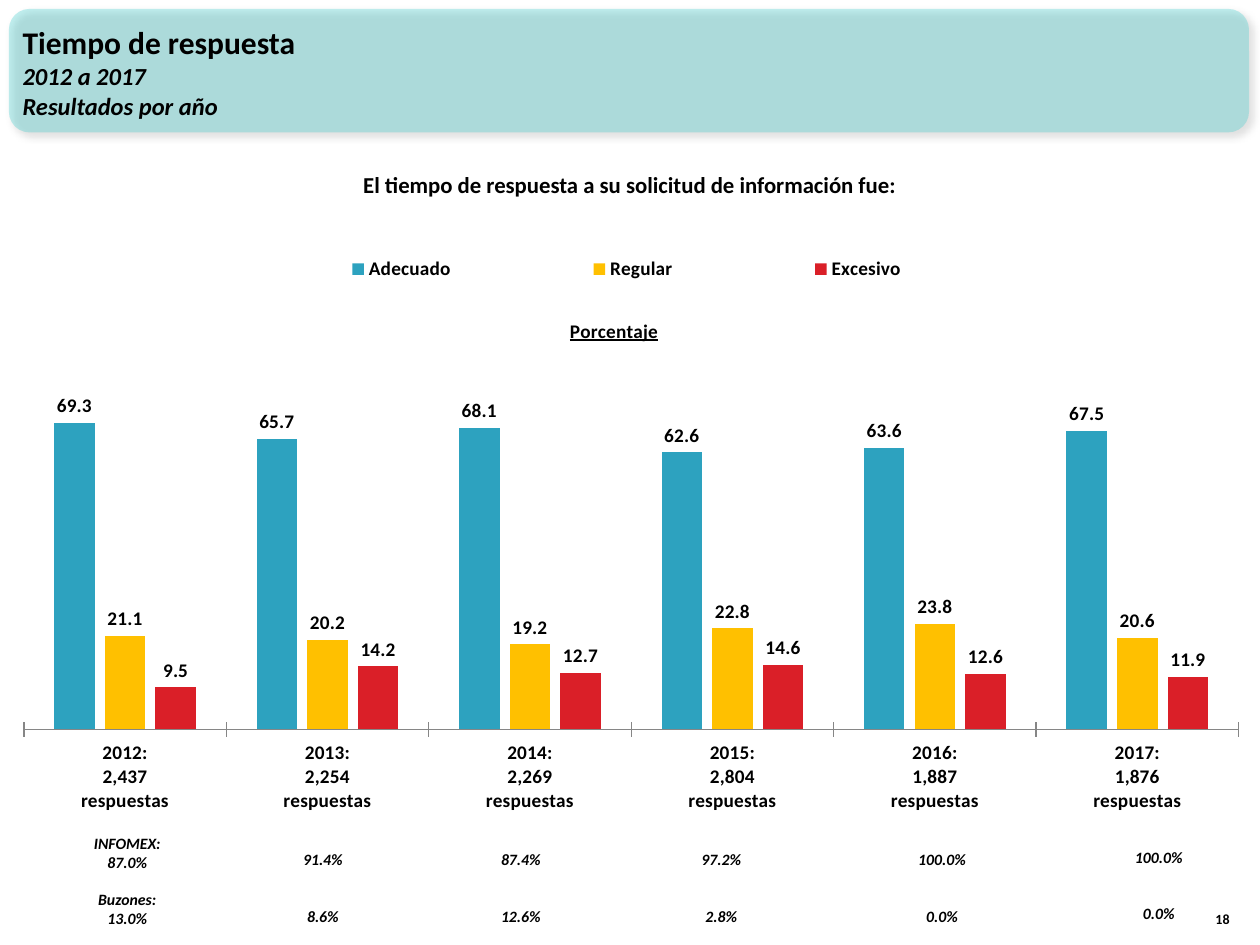
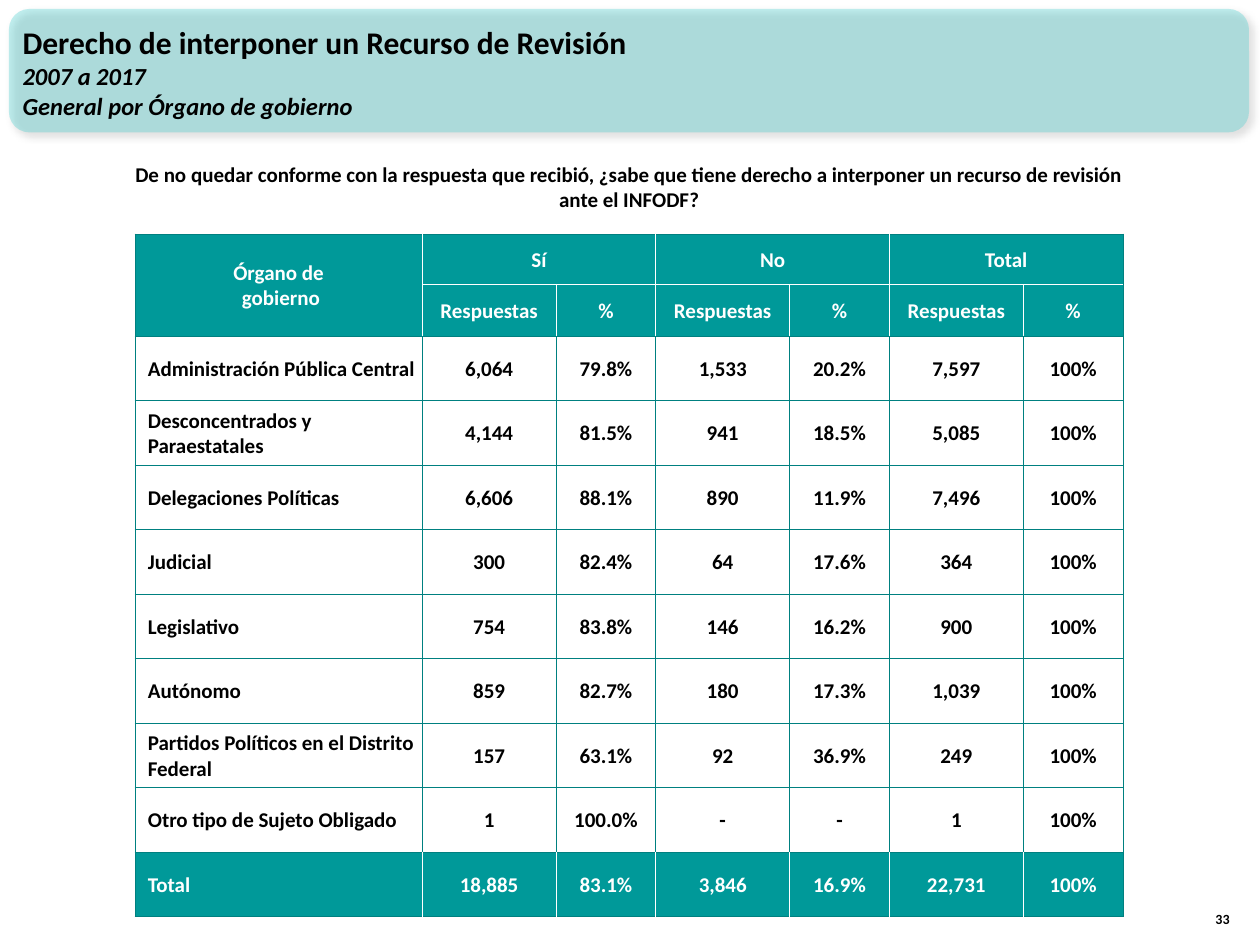
from dataclasses import dataclass

from lxml.etree import SubElement
from pptx import Presentation
from pptx.chart.data import CategoryChartData
from pptx.dml.color import RGBColor
from pptx.enum.chart import XL_CHART_TYPE, XL_LABEL_POSITION, XL_LEGEND_POSITION, XL_TICK_MARK
from pptx.enum.shapes import MSO_SHAPE
from pptx.enum.text import MSO_ANCHOR, MSO_AUTO_SIZE, PP_ALIGN
from pptx.oxml import parse_xml
from pptx.oxml.ns import nsdecls, qn
from pptx.util import Cm, Pt


@dataclass(frozen=True)
class Theme:
    font: str = "Calibri"
    ink: str = "000000"
    paper: str = "FFFFFF"
    band: str = "33CCCC"
    header: str = "009999"
    rule: str = "008080"
    axis: str = "868686"
    title: float = 18
    subtitle: float = 14
    question: float = 13
    table: float = 12
    chart: float = 11
    share: float = 9
    page: float = 8


THEME = Theme()


@dataclass(frozen=True)
class Box:
    """Left, top, width and height in centimetres."""
    left: float
    top: float
    width: float
    height: float

    def lengths(self) -> tuple:
        return Cm(self.left), Cm(self.top), Cm(self.width), Cm(self.height)


@dataclass(frozen=True)
class ChannelShare:
    """Share of answers by channel, shown below one year."""
    text: str
    box: Box
    gap: float = 21.5
    inset: float = 0


@dataclass(frozen=True)
class Series:
    name: str
    color: str
    values: tuple


# Content of the chart slide
YEARS = {2012: "2,437", 2013: "2,254", 2014: "2,269", 2015: "2,804", 2016: "1,887", 2017: "1,876"}
RATINGS = [
    Series("Adecuado", "2DA2BF", (69.3, 65.7, 68.1, 62.6, 63.6, 67.5)),
    Series("Regular", "FFC000", (21.1, 20.2, 19.2, 22.8, 23.8, 20.6)),
    Series("Excesivo", "DA1F28", (9.5, 14.2, 12.7, 14.6, 12.6, 11.9)),
]
SHARES = [
    ChannelShare("INFOMEX: 87.0%\nBuzones: 13.0%", Box(1.51, 16.68, 2.11, 2.18), 10.5, 0.25),
    ChannelShare("91.4%\n8.6%", Box(5.76, 17.01, 1.5, 1.8)),
    ChannelShare("87.4%\n12.6%", Box(9.75, 17.01, 1.5, 1.8)),
    ChannelShare("97.2%\n2.8%", Box(13.79, 17.01, 1.5, 1.8)),
    ChannelShare("100.0%\n0.0%", Box(18.24, 17.01, 1.5, 1.8)),
    ChannelShare("100.0%\n0.0%", Box(22.61, 16.96, 1.5, 1.8)),
]

# Content of the table slide
HEADINGS = [
    ("Órgano de\n gobierno", "Sí", "", "No", "", "Total", ""),
    ("",) + ("Respuestas", "%") * 3,
]
BODIES = [
    ("Administración Pública Central", "6,064", "79.8%", "1,533", "20.2%", "7,597", "100%"),
    ("Desconcentrados y Paraestatales", "4,144", "81.5%", "941", "18.5%", "5,085", "100%"),
    ("Delegaciones Políticas", "6,606", "88.1%", "890", "11.9%", "7,496", "100%"),
    ("Judicial", "300", "82.4%", "64", "17.6%", "364", "100%"),
    ("Legislativo", "754", "83.8%", "146", "16.2%", "900", "100%"),
    ("Autónomo", "859", "82.7%", "180", "17.3%", "1,039", "100%"),
    ("Partidos Políticos en el Distrito Federal", "157", "63.1%", "92", "36.9%", "249", "100%"),
    ("Otro tipo de Sujeto Obligado", "1", "100.0%", "-", "-", "1", "100%"),
    ("Total", "18,885", "83.1%", "3,846", "16.9%", "22,731", "100%"),
]
COLUMN_WIDTHS = (5.79,) + (2.7, 2.01) * 3
HEADING_HEIGHT, BODY_HEIGHT = 1.01, 1.3


def style_font(font, size: float, color: str = THEME.ink, bold: bool = True,
               italic: bool = False) -> None:
    font.name, font.size, font.bold, font.italic = THEME.font, Pt(size), bold, italic
    font.color.rgb = RGBColor.from_string(color)


def write(frame, text: str, *, size: float, color: str = THEME.ink, italic: bool = False,
          align=PP_ALIGN.CENTER, gap: float = 0) -> None:
    """Add each line of text to the frame as a paragraph."""
    for line in text.split("\n"):
        first = not frame.text
        paragraph = frame.paragraphs[0] if first else frame.add_paragraph()
        paragraph.alignment = align
        paragraph.space_before = Pt(0 if first else gap)
        run = paragraph.add_run()
        run.text = line
        style_font(run.font, size, color, italic=italic)


def add_text(slide, box: Box, text: str, *, anchor=MSO_ANCHOR.TOP, inset: float = 0.25,
             **text_format) -> None:
    frame = slide.shapes.add_textbox(*box.lengths()).text_frame
    frame.word_wrap = True
    frame.vertical_anchor = anchor
    frame.margin_left = frame.margin_right = Cm(inset)
    write(frame, text, **text_format)


# Parts shared by the slides
def add_band(slide) -> None:
    band = slide.shapes.add_shape(MSO_SHAPE.ROUNDED_RECTANGLE, *Box(0.18, 0.18, 25, 2.49).lengths())
    band.fill.solid()
    band.fill.fore_color.rgb = RGBColor.from_string(THEME.band)
    band.line.fill.background()
    band.shadow.inherit = False
    properties = band._element.spPr
    fill_color = properties.find(qn("a:solidFill"))[0]
    SubElement(fill_color, qn("a:alpha")).set("val", "30000")
    properties.find(qn("a:effectLst")).append(parse_xml(
        f'<a:outerShdw {nsdecls("a")} blurRad="{Pt(4)}" dist="{Pt(3)}" dir="2700000">'
        f'<a:srgbClr val="{THEME.ink}"><a:alpha val="40000"/></a:srgbClr></a:outerShdw>'))
    slide.shapes._spTree.insert(2, band._element)  # behind the title


def add_survey_slide(deck, title: str, subtitle: str, page: int):
    slide = deck.slides.add_slide(deck.slide_layouts[5])
    add_band(slide)
    heading = slide.shapes.title
    heading.left, heading.top, heading.width, heading.height = Box(0.2, 0.25, 23.29, 2.39).lengths()
    frame = heading.text_frame
    frame.auto_size = MSO_AUTO_SIZE.NONE
    frame.vertical_anchor = MSO_ANCHOR.MIDDLE
    write(frame, title, size=THEME.title, align=PP_ALIGN.LEFT)
    write(frame, subtitle, size=THEME.subtitle, italic=True, align=PP_ALIGN.LEFT)
    add_text(slide, Box(24.02, 17.79, 1.02, 1.02), str(page), size=THEME.page,
             align=PP_ALIGN.RIGHT, anchor=MSO_ANCHOR.BOTTOM)
    return slide


# Chart
def place(part, index: int, inner: bool = False, **percents: float) -> None:
    """Set a manual layout, in percent of the chart, on a chart part."""
    previous = part.find(qn("c:layout"))
    if previous is not None:
        part.remove(previous)
    layout = parse_xml(f'<c:layout {nsdecls("c")}><c:manualLayout/></c:layout>')
    manual = layout[0]
    if inner:
        SubElement(manual, qn("c:layoutTarget")).set("val", "inner")
    for mode in ("xMode", "yMode"):
        SubElement(manual, qn(f"c:{mode}")).set("val", "edge")
    for side, percent in percents.items():
        SubElement(manual, qn(f"c:{side}")).set("val", str(percent / 100))
    part.insert(index, layout)


def add_ratings_chart(slide) -> None:
    data = CategoryChartData(number_format="0.0")
    data.categories = [f"{year}:\n{answers}\nrespuestas" for year, answers in YEARS.items()]
    for rating in RATINGS:
        data.add_series(rating.name, rating.values)
    chart = slide.shapes.add_chart(XL_CHART_TYPE.COLUMN_CLUSTERED,
                                   *Box(0.05, 4.72, 25.35, 12.19).lengths(), data).chart
    style_font(chart.font, THEME.chart)

    # Columns and their labels
    plot = chart.plots[0]
    plot.gap_width, plot.overlap, plot.vary_by_categories = 150, -25, False
    for series, rating in zip(plot.series, RATINGS):
        series.format.fill.solid()
        series.format.fill.fore_color.rgb = RGBColor.from_string(rating.color)
        labels = series.data_labels
        labels.show_value = True
        labels.number_format, labels.number_format_is_linked = "0.0", False
        labels.position = XL_LABEL_POSITION.OUTSIDE_END
        style_font(labels.font, THEME.chart)

    # Axes
    years, percent = chart.category_axis, chart.value_axis
    years.major_tick_mark = XL_TICK_MARK.CROSS
    years.format.line.color.rgb = RGBColor.from_string(THEME.axis)
    style_font(years.tick_labels.font, THEME.chart)
    percent.minimum_scale, percent.maximum_scale, percent.major_unit = 0, 80, 20
    percent.has_major_gridlines = False
    percent.visible = False

    # Title and legend
    title = chart.chart_title
    write(title.text_frame, "Porcentaje", size=THEME.chart)
    title.text_frame.paragraphs[0].runs[0].font.underline = True
    chart.has_legend = True
    chart.legend.position = XL_LEGEND_POSITION.TOP
    chart.legend.include_in_layout = False
    style_font(chart.legend.font, THEME.chart)

    place(title._element, 1, x=44.85, y=13.2)
    place(chart.legend._element, 1, x=17, y=2.8, w=65.3, h=6)
    place(chart._chartSpace.find(".//" + qn("c:plotArea")), 0, inner=True,
          x=1.7, y=23.4, w=96.6, h=58.5)


# Table
def set_borders(cell, **colors: str) -> None:
    properties = cell._tc.get_or_add_tcPr()
    for side, color in colors.items():
        properties.append(parse_xml(
            f'<a:ln{side} {nsdecls("a")} w="{Pt(0.5)}"><a:solidFill>'
            f'<a:srgbClr val="{color}"/></a:solidFill></a:ln{side}>'))


def add_bodies_table(slide) -> None:
    rows = HEADINGS + BODIES
    heights = [HEADING_HEIGHT] * len(HEADINGS) + [BODY_HEIGHT] * len(BODIES)
    box = Box(2.72, 4.72, sum(COLUMN_WIDTHS), sum(heights))
    table = slide.shapes.add_table(len(rows), len(COLUMN_WIDTHS), *box.lengths()).table
    table.first_row = table.horz_banding = False
    for column, width in zip(table.columns, COLUMN_WIDTHS):
        column.width = Cm(width)
    for row, height in zip(table.rows, heights):
        row.height = Cm(height)

    last_row, last_column = len(rows) - 1, len(COLUMN_WIDTHS) - 1
    for r, texts in enumerate(rows):
        strong = r < len(HEADINGS) or r == last_row
        right_column = last_column - 1 if r == 0 else last_column  # top headings span two
        for c, text in enumerate(texts):
            cell = table.cell(r, c)
            cell.vertical_anchor = MSO_ANCHOR.MIDDLE
            cell.margin_left = cell.margin_right = cell.margin_top = Cm(0.03)
            cell.margin_bottom = 0
            name = c == 0 and r >= len(HEADINGS)
            if name:
                cell.margin_left = Cm(0.26)

            def edge(white: bool) -> str:
                return THEME.paper if white else THEME.rule

            set_borders(cell, L=edge(strong and c > 0), R=edge(strong and c < right_column),
                        T=edge(r == 1 and c > 0), B=edge(r == 0 and c > 0))
            if strong:
                cell.fill.solid()
                cell.fill.fore_color.rgb = RGBColor.from_string(THEME.header)
            else:
                cell.fill.background()
            if text:
                write(cell.text_frame, text, size=THEME.table,
                      color=THEME.paper if strong else THEME.ink,
                      align=PP_ALIGN.LEFT if name else PP_ALIGN.CENTER)

    table.cell(0, 0).merge(table.cell(1, 0))
    for c in range(1, last_column, 2):
        table.cell(0, c).merge(table.cell(0, c + 1))


def main() -> None:
    deck = Presentation()
    deck.slide_width, deck.slide_height = Cm(25.4), Cm(19.05)

    # Response time by year
    slide = add_survey_slide(deck, "Tiempo de respuesta", "2012 a 2017\nResultados por año", 18)
    add_text(slide, Box(2.26, 3.31, 20.85, 0.81),
             "El tiempo de respuesta a su solicitud de información fue:", size=THEME.question)
    add_ratings_chart(slide)
    for share in SHARES:
        add_text(slide, share.box, share.text, size=THEME.share, italic=True,
                 gap=share.gap, inset=share.inset)

    # Right of appeal by government body
    slide = add_survey_slide(deck, "Derecho de interponer un Recurso de Revisión",
                             "2007 a 2017\nGeneral por Órgano de gobierno", 33)
    add_text(slide, Box(2.26, 3.13, 20.85, 1.27),
             "De no quedar conforme con la respuesta que recibió, ¿sabe que tiene derecho a "
             "interponer un recurso de revisión ante el INFODF?", size=THEME.table)
    add_bodies_table(slide)

    deck.save("out.pptx")


if __name__ == "__main__":
    main()
